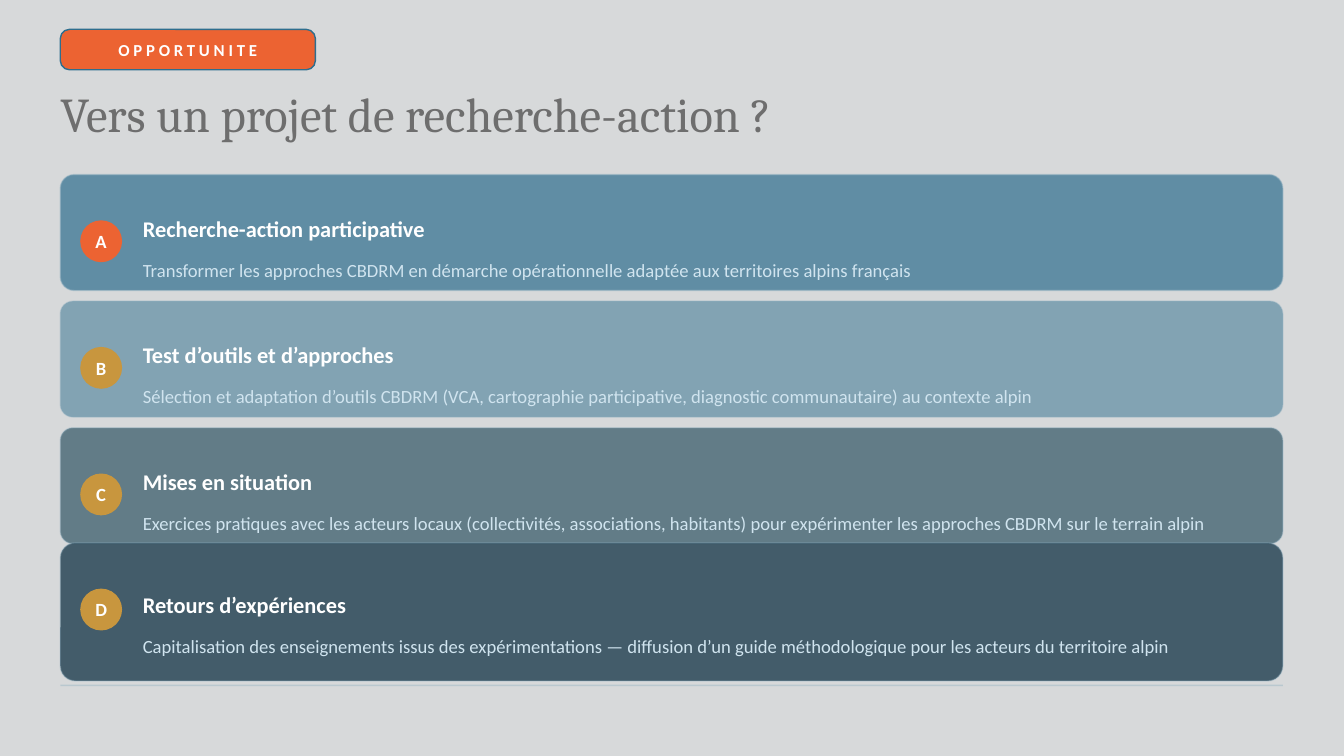
import dataclasses

import pptx
import pptx.dml.color
import pptx.enum.shapes
import pptx.enum.text
import pptx.oxml
import pptx.util
from pptx.util import Cm, Pt

SHAPE = pptx.enum.shapes.MSO_SHAPE
ALIGN = pptx.enum.text.PP_ALIGN
ANCHOR = pptx.enum.text.MSO_ANCHOR


@dataclasses.dataclass(frozen=True)
class Theme:
    back: str = "D7D9DA"
    accent: str = "EC6332"
    gold: str = "C8963E"
    blue: str = "2E6E8E"
    teal: str = "244B5C"
    navy: str = "1E3D4E"
    rule: str = "8EAFC0"
    white: str = "FFFFFF"
    pale: str = "D0E4EF"
    grey: str = "6E6E6E"
    sans: str = "Calibri"
    serif: str = "Cambria"
    title: float = 34.7
    head: float = 16
    body: float = 13.3
    tag: float = 12


THEME = Theme()
LEFT, WIDTH = 1.52, 30.81
TOP, STEP = 4.4, 3.19

# letter, top, height, space below text, fill, opacity, line opacity, corner, dot, head, body
CARDS = [
    ("A", TOP, 2.92, 0, THEME.blue, 70, 45, 0.12, THEME.accent,
     "Recherche-action participative",
     "Transformer les approches CBDRM en démarche opérationnelle adaptée "
     "aux territoires alpins français"),
    ("B", TOP + STEP, 2.92, 0, THEME.blue, 50, 35, 0.11, THEME.gold,
     "Test d’outils et d’approches",
     "Sélection et adaptation d’outils CBDRM (VCA, cartographie participative, "
     "diagnostic communautaire) au contexte alpin"),
    ("C", TOP + 2 * STEP, 2.92, 0, THEME.teal, 65, 35, 0.11, THEME.gold,
     "Mises en situation",
     "Exercices pratiques avec les acteurs locaux (collectivités, associations, "
     "habitants) pour expérimenter les approches CBDRM sur le terrain alpin"),
    ("D", 13.68, 3.48, 0.14, THEME.navy, 80, 35, 0.11, THEME.gold,
     "Retours d’expériences",
     "Capitalisation des enseignements issus des expérimentations — diffusion "
     "d’un guide méthodologique pour les acteurs du territoire alpin"),
]


def color(code):
    return pptx.dml.color.RGBColor.from_string(code)


def fade(part, route, share):
    """Set the opacity, in percent, of the colour found at route."""
    tone = part.element.spPr.xpath(route + "/a:srgbClr")[0]
    alpha = pptx.oxml.parse_xml(
        '<a:alpha xmlns:a="http://schemas.openxmlformats.org/drawingml/2006/main"'
        f' val="{share * 1000}"/>')
    tone.append(alpha)


def set_frame(frame, anchor, top=0):
    form = {"margin_left": 0, "margin_right": 0, "margin_top": Cm(top),
            "margin_bottom": 0, "word_wrap": True, "vertical_anchor": anchor,
            "auto_size": pptx.enum.text.MSO_AUTO_SIZE.NONE}
    for key, value in form.items():
        setattr(frame, key, value)


def write(para, text, size, tone, bold=False, face=THEME.sans,
          align=ALIGN.LEFT, space=None):
    para.alignment = align
    if space:
        para.line_spacing = Pt(space)
    run = para.add_run()
    run.text = text
    form = {"size": Pt(size), "name": face, "bold": bold}
    for key, value in form.items():
        setattr(run.font, key, value)
    run.font.color.rgb = color(tone)
    return run


def add_block(slide, kind, box, fill, line, corner=None):
    block = slide.shapes.add_shape(kind, *map(Cm, box))
    block.shadow.inherit = False
    block.fill.solid()
    block.fill.fore_color.rgb = color(fill)
    block.line.color.rgb = color(line)
    block.line.width = Pt(1)
    if corner:
        block.adjustments[0] = corner
    return block


def add_label(block, text, size):
    set_frame(block.text_frame, ANCHOR.MIDDLE)
    return write(block.text_frame.paragraphs[0], text, size, THEME.white,
                 bold=True, align=ALIGN.CENTER)


def add_header(slide, left, top, width):
    tag = add_block(slide, SHAPE.ROUNDED_RECTANGLE, (left, top, 6.43, 1.02),
                    THEME.accent, THEME.blue, 0.23)
    run = add_label(tag, "OPPORTUNITE", THEME.tag)
    run.font._element.set("spc", "270")

    title = slide.shapes.title
    form = {"left": left, "top": top + 1.37, "width": width, "height": 1.96}
    for key, value in form.items():
        setattr(title, key, Cm(value))
    set_frame(title.text_frame, ANCHOR.TOP)
    write(title.text_frame.paragraphs[0], "Vers un projet de recherche-action ?",
          THEME.title, THEME.grey, face=THEME.serif)


def add_card(slide, left, width, card):
    letter, top, height, foot, fill, share, edge, corner, dot, head, body = card
    panel = add_block(slide, SHAPE.ROUNDED_RECTANGLE, (left, top, width, height),
                      fill, THEME.rule, corner)
    fade(panel, "a:solidFill", share)
    fade(panel, "a:ln/a:solidFill", edge)

    badge = add_block(slide, SHAPE.OVAL, (left + 0.52, top + 1.17, 1.02, 1.02),
                      dot, dot)
    add_label(badge, letter, THEME.body)

    box = (left + 2.08, top + 0.14, width - 2.77, height - 0.14 - foot)
    frame = slide.shapes.add_textbox(*map(Cm, box)).text_frame
    set_frame(frame, ANCHOR.MIDDLE, top=0.25)
    write(frame.paragraphs[0], head, THEME.head, THEME.white, bold=True, space=30)
    write(frame.add_paragraph(), body, THEME.body, THEME.pale, space=28)


def add_rule(slide, left, top, width):
    rule = slide.shapes.add_connector(
        pptx.enum.shapes.MSO_CONNECTOR.STRAIGHT,
        Cm(left), Cm(top), Cm(left + width), Cm(top))
    rule.line.color.rgb = color(THEME.rule)
    rule.line.width = Pt(1)
    fade(rule, "a:ln/a:solidFill", 40)
    rule.element.spPr.append(pptx.oxml.parse_xml(
        '<a:effectLst xmlns:a="http://schemas.openxmlformats.org/drawingml/2006/main"/>'))


def main():
    deck = pptx.Presentation()
    deck.slide_width, deck.slide_height = Cm(33.87), Cm(19.05)
    slide = deck.slides.add_slide(deck.slide_layouts[5])
    slide.background.fill.solid()
    slide.background.fill.fore_color.rgb = color(THEME.back)
    add_header(slide, LEFT, 0.74, WIDTH)
    for card in CARDS:
        add_card(slide, LEFT, WIDTH, card)
    add_rule(slide, LEFT, 17.27, WIDTH)
    deck.save("out.pptx")


if __name__ == "__main__":
    main()
